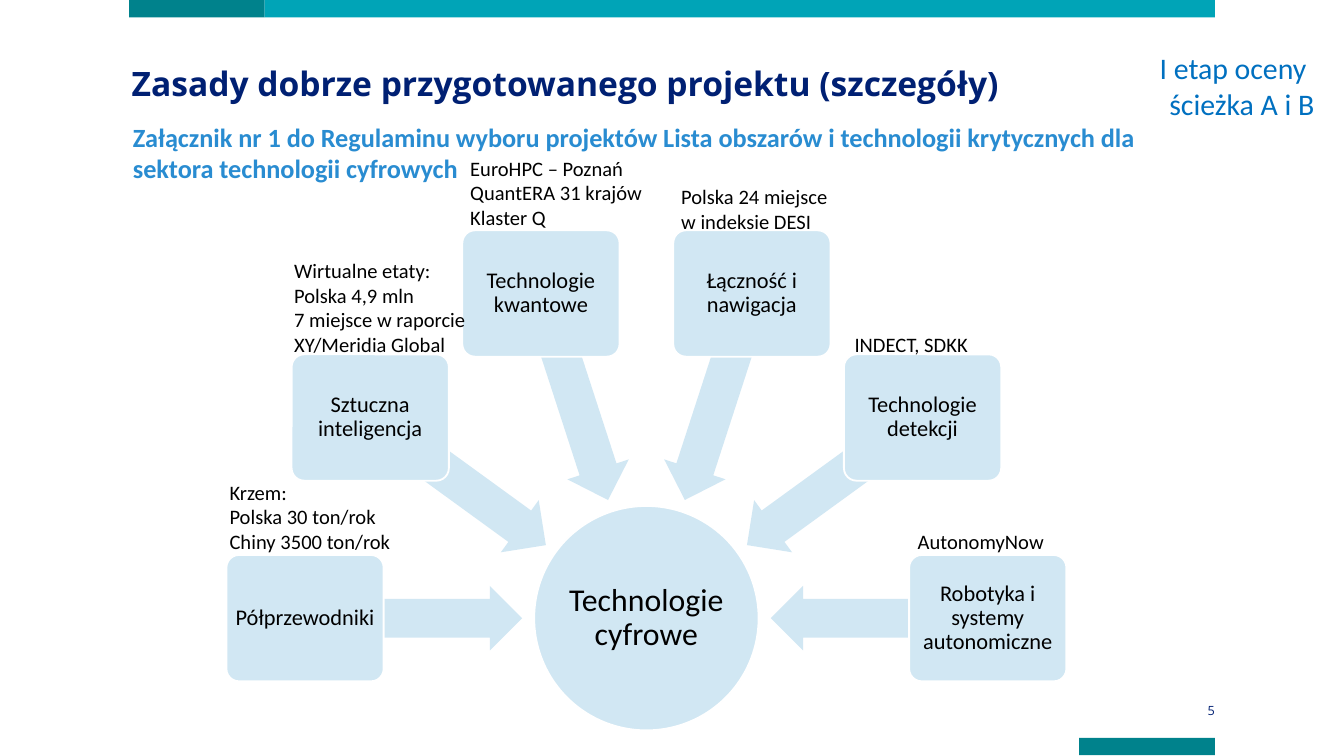
import math
import pptx
import pptx.util
import pptx.dml.color
import pptx.enum.shapes
import pptx.enum.text

Inches = pptx.util.Inches
Pt = pptx.util.Pt
RGBColor = pptx.dml.color.RGBColor
SHAPE = pptx.enum.shapes.MSO_SHAPE
ALIGN = pptx.enum.text.PP_ALIGN
ANCHOR = pptx.enum.text.MSO_ANCHOR

TEAL = RGBColor(0x00, 0x82, 0x8C)
AQUA = RGBColor(0x00, 0xA4, 0xB7)
NAVY = RGBColor(0x00, 0x20, 0x73)
SKY = RGBColor(0x29, 0x8C, 0xD1)
BLUE = RGBColor(0x00, 0x70, 0xC0)
PALE = RGBColor(0xD1, 0xE7, 0xF3)
BLACK = RGBColor(0, 0, 0)
WHITE = RGBColor(255, 255, 255)

HUB_X, HUB_Y = 4.81, 4.6
BOX_RING, ARROW_RING = 2.54, 1.73
TOPICS = [
    "Półprzewodniki",
    "Sztuczna inteligencja",
    "Technologie kwantowe",
    "Łączność i nawigacja",
    "Technologie detekcji",
    "Robotyka i systemy autonomiczne",
]
NOTES = [
    ("Krzem:\nPolska 30 ton/rok\nChiny 3500 ton/rok", 1.61, 3.52, 1.5, 0.66),
    ("Wirtualne etaty:\nPolska 4,9 mln\n7 miejsce w raporcie XY/Meridia Global",
     2.09, 1.87, 1.5, 0.84),
    ("EuroHPC – Poznań\nQuantERA 31 krajów\nKlaster Q", 3.4, 1.11, 1.68, 0.66),
    ("Polska 24 miejsce w indeksie DESI", 4.97, 1.32, 1.42, 0.47),
    ("INDECT, SDKK", 6.26, 2.42, 1.68, 0.29),
    ("AutonomyNow", 6.73, 3.89, 1.34, 0.29),
]


def set_font(frame, size, color, face="Calibri", bold=False):
    for para in frame.paragraphs:
        for run in para.runs:
            run.font.size = Pt(size)
            run.font.name = face
            run.font.bold = bold
            run.font.color.rgb = color


def set_inset(frame, side, top):
    frame.margin_left = frame.margin_right = Inches(side)
    frame.margin_top = frame.margin_bottom = Inches(top)


def add_text(slide, text, left, top, width, height, size, color, **style):
    box = slide.shapes.add_textbox(
        Inches(left), Inches(top), Inches(width), Inches(height))
    frame = box.text_frame
    frame.word_wrap = True
    frame.text = text
    set_font(frame, size, color, **style)
    return frame


def add_block(slide, kind, left, top, width, height, fill):
    block = slide.shapes.add_shape(
        kind, Inches(left), Inches(top), Inches(width), Inches(height))
    block.shadow.inherit = False
    block.fill.solid()
    block.fill.fore_color.rgb = fill
    block.line.fill.background()
    return block


def add_node(slide, kind, mid_x, mid_y, width, height, text, size, inset):
    node = add_block(slide, kind, mid_x - width / 2, mid_y - height / 2,
                     width, height, PALE)
    node.line.color.rgb = WHITE
    node.line.width = Pt(1)
    frame = node.text_frame
    frame.word_wrap = True
    frame.vertical_anchor = ANCHOR.MIDDLE
    set_inset(frame, inset, inset)
    frame.text = text
    frame.paragraphs[0].alignment = ALIGN.CENTER
    frame.paragraphs[0].line_spacing = 0.9
    set_font(frame, size, BLACK)
    return node


def add_arrow(slide, mid_x, mid_y, angle):
    width, height = 1.61, 0.48
    arrow = add_block(slide, SHAPE.LEFT_ARROW, mid_x - width / 2,
                      mid_y - height / 2, width, height, PALE)
    arrow.adjustments[0] = 0.6
    arrow.adjustments[1] = 0.5
    arrow.rotation = angle % 360


def ring_point(radius, angle):
    turn = math.radians(angle)
    return HUB_X + radius * math.cos(turn), HUB_Y + radius * math.sin(turn)


def add_hub(slide):
    add_node(slide, SHAPE.OVAL, HUB_X, HUB_Y, 1.67, 1.67,
             "Technologie cyfrowe", 17, 0.01)
    for index, topic in enumerate(TOPICS):
        angle = 180 + 36 * index
        add_arrow(slide, *ring_point(ARROW_RING, angle), angle)
        node = add_node(slide, SHAPE.ROUNDED_RECTANGLE,
                        *ring_point(BOX_RING, angle), 1.17, 0.94,
                        topic, 12, 0.03)
        node.adjustments[0] = 0.1


def add_frame(slide):
    add_block(slide, SHAPE.RECTANGLE, 0.96, 0, 1.01, 0.13, TEAL)
    add_block(slide, SHAPE.RECTANGLE, 1.97, 0, 7.07, 0.13, AQUA)
    add_block(slide, SHAPE.RECTANGLE, 8.03, 5.49, 1.01, 0.13, TEAL)
    page = add_text(slide, "5", 8.03, 5.22, 1.01, 0.13, 6.8, NAVY,
                    face="Open Sans")
    set_inset(page, 0, 0.08)
    page.vertical_anchor = ANCHOR.MIDDLE
    page.paragraphs[0].alignment = ALIGN.RIGHT


def add_heads(slide):
    title = add_text(slide, "Zasady dobrze przygotowanego projektu (szczegóły)",
                     0.98, 0.39, 7.87, 0.45, 18, NAVY,
                     face="Open Sans", bold=True)
    set_inset(title, 0, 0)
    title.paragraphs[0].line_spacing = Pt(27)
    add_text(slide, "Załącznik nr 1 do Regulaminu wyboru projektów Lista "
             "obszarów i technologii krytycznych dla sektora technologii "
             "cyfrowych", 0.89, 0.85, 8.05, 0.58, 14.1, SKY, bold=True)
    stage = add_text(slide, "I etap oceny\nścieżka A i B",
                     8.53, 0.32, 1.42, 0.64, 16, BLUE)
    stage.paragraphs[1].alignment = ALIGN.CENTER


def main():
    deck = pptx.Presentation()
    deck.slide_width = Inches(10)
    deck.slide_height = Inches(10 * 9 / 16)
    slide = deck.slides.add_slide(deck.slide_layouts[6])
    add_frame(slide)
    add_heads(slide)
    add_hub(slide)
    for note in NOTES:
        add_text(slide, *note, 11, BLACK)
    deck.save("out.pptx")


if __name__ == "__main__":
    main()
